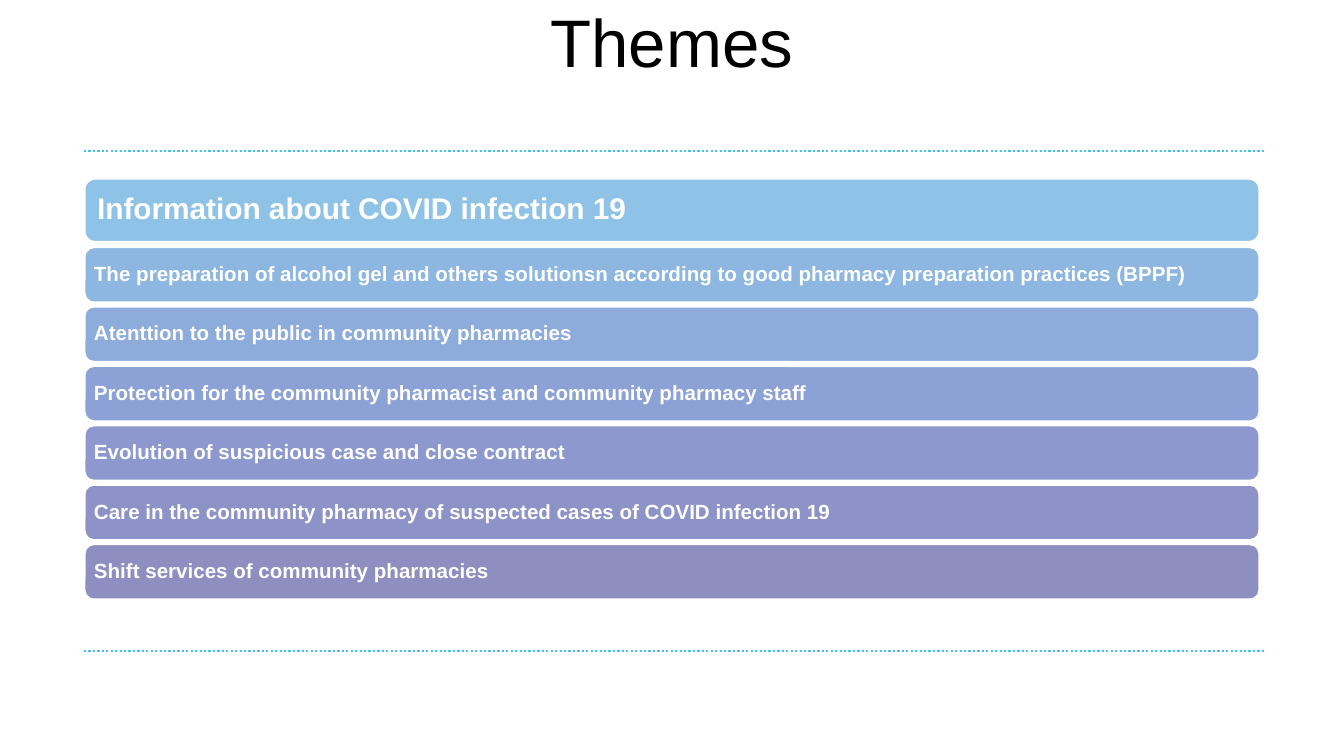
from pptx import Presentation, util as u
from pptx.dml.color import RGBColor
from pptx.enum import dml, shapes, text
from pptx.oxml.ns import qn
from lxml import etree

COLORS = {"rule": "45C0EB", "title": "000000", "white": "FFFFFF"}
THEMES = [
    ("Information about COVID infection 19", "8EC2E6"),
    ("The preparation of alcohol gel and others solutionsn according to good "
     "pharmacy preparation practices (BPPF)", "8DB6E1"),
    ("Atenttion to the public in community pharmacies", "8DABDB"),
    ("Protection for the community pharmacist and community pharmacy staff", "8CA1D5"),
    ("Evolution of suspicious case and close contract", "8D99CE"),
    ("Care in the community pharmacy of suspected cases of COVID infection 19", "8D92C7"),
    ("Shift services of community pharmacies", "8F8EC0"),
]
WIDTH = 10
HEIGHT = WIDTH * 9 / 16
LEFT, CONTENT_W = 0.063 * WIDTH, 0.874 * WIDTH
RULE_TOP, RULE_GAP = HEIGHT / 5, 3.72
HEAD_H, ROW_H, ROW_PITCH = 0.47, 0.41, 0.442


def rgb(value):
    return RGBColor.from_string(value)


def set_text(sp, content, size, color, inset=0, bold=False, **paragraph):
    tf = sp.text_frame
    tf.text = content
    frame = {"word_wrap": True, "auto_size": text.MSO_AUTO_SIZE.NONE}
    frame.update({f"margin_{side}": u.Inches(inset)
                  for side in ("left", "top", "right", "bottom")})
    for name, value in frame.items():
        setattr(tf, name, value)
    p = tf.paragraphs[0]
    for name, value in paragraph.items():
        setattr(p, name, value)
    font = p.runs[0].font
    for name, value in {"name": "Arial", "size": u.Pt(size), "bold": bold}.items():
        setattr(font, name, value)
    font.color.rgb = rgb(color)


def add_title(s, left, top, width, height):
    sp = s.shapes.title
    box = {"left": left, "top": top, "width": width, "height": height}
    for name, value in box.items():
        setattr(sp, name, u.Inches(value))
    set_text(sp, "Themes", 36, COLORS["title"],
             alignment=text.PP_ALIGN.CENTER, line_spacing=u.Pt(26))
    sp.text_frame.vertical_anchor = text.MSO_ANCHOR.TOP


def add_rule(s, left, top, width):
    line = s.shapes.add_connector(
        shapes.MSO_CONNECTOR.STRAIGHT,
        *map(u.Inches, (left, top, left + width, top)))
    line.line.color.rgb = rgb(COLORS["rule"])
    line.line.width = u.Pt(1.2)
    line.line.dash_style = dml.MSO_LINE.ROUND_DOT
    etree.SubElement(line._element.spPr, qn("a:effectLst"))


def add_bar(s, left, top, width, height, content, fill, size, inset):
    sp = s.shapes.add_shape(shapes.MSO_SHAPE.ROUNDED_RECTANGLE,
                            *map(u.Inches, (left, top, width, height)))
    sp.shadow.inherit = False
    sp.fill.solid()
    sp.fill.fore_color.rgb = rgb(fill)
    sp.line.color.rgb = rgb(COLORS["white"])
    sp.line.width = u.Pt(1)
    set_text(sp, content, size, COLORS["white"], inset, bold=True,
             alignment=text.PP_ALIGN.LEFT, line_spacing=0.9)
    sp.text_frame.vertical_anchor = text.MSO_ANCHOR.MIDDLE


def add_theme_list(s, left, top, width):
    """Stack a taller first bar above evenly pitched rows."""
    add_bar(s, left, top, width, HEAD_H, *THEMES[0], size=16, inset=0.07)
    first_row = top + HEAD_H + 0.04
    for i, theme in enumerate(THEMES[1:]):
        add_bar(s, left, first_row + i * ROW_PITCH, width, ROW_H,
                *theme, size=11, inset=0.05)


def main():
    prs = Presentation()
    prs.slide_width, prs.slide_height = u.Inches(WIDTH), u.Inches(HEIGHT)
    s = prs.slides.add_slide(prs.slide_layouts[5])
    for i in range(2):
        add_rule(s, WIDTH / 16, RULE_TOP + i * RULE_GAP, 0.878 * WIDTH)
    add_title(s, LEFT, 0.24, CONTENT_W, 0.35)
    add_theme_list(s, LEFT, 1.33, CONTENT_W)
    prs.save("out.pptx")


if __name__ == "__main__":
    main()
